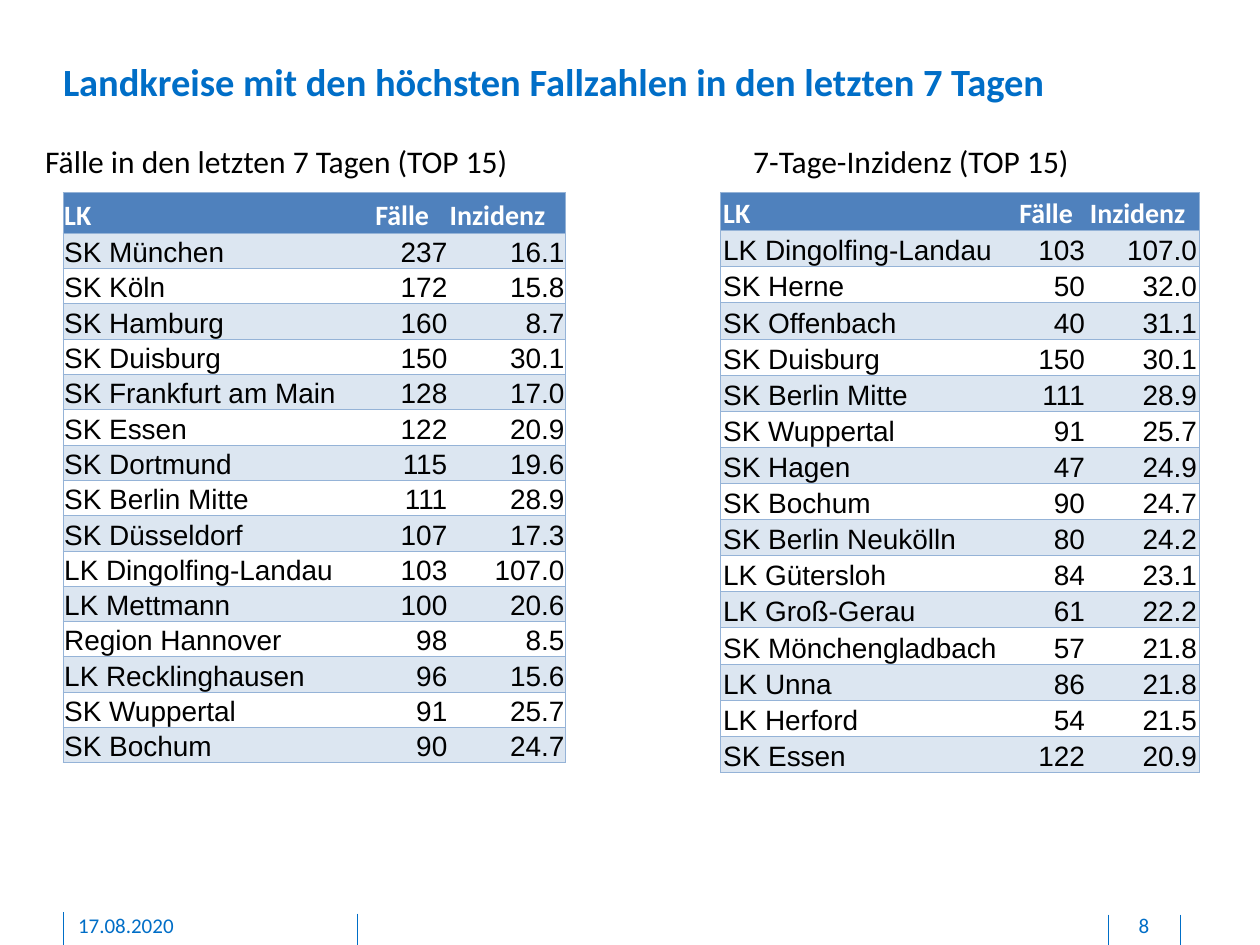
from dataclasses import dataclass

from lxml import etree
from pptx import Presentation
from pptx import util as u
from pptx.dml.color import RGBColor
from pptx.enum import shapes, text
from pptx.oxml.ns import qn


@dataclass(frozen=True)
class Theme:
    blue: str = "006EC7"
    black: str = "000000"
    white: str = "FFFFFF"
    header: str = "4F81BD"
    band: str = "DCE6F1"
    border: str = "95B3D7"
    heading_font: str = "Calibri"
    body_font: str = "Arial"
    title_size: int = 22
    caption_size: int = 18
    table_size: int = 16
    footer_size: int = 12
    line_width: float = 0.5
    plain_table_style: str = "{2D5ABB26-0587-4C30-8999-92F81FD0307C}"


THEME = Theme()
HEADINGS = ("LK", "Fälle", "Inzidenz")

MOST_CASES = [
    ("SK München", "237", "16.1"),
    ("SK Köln", "172", "15.8"),
    ("SK Hamburg", "160", "8.7"),
    ("SK Duisburg", "150", "30.1"),
    ("SK Frankfurt am Main", "128", "17.0"),
    ("SK Essen", "122", "20.9"),
    ("SK Dortmund", "115", "19.6"),
    ("SK Berlin Mitte", "111", "28.9"),
    ("SK Düsseldorf", "107", "17.3"),
    ("LK Dingolfing-Landau", "103", "107.0"),
    ("LK Mettmann", "100", "20.6"),
    ("Region Hannover", "98", "8.5"),
    ("LK Recklinghausen", "96", "15.6"),
    ("SK Wuppertal", "91", "25.7"),
    ("SK Bochum", "90", "24.7"),
]

HIGHEST_INCIDENCE = [
    ("LK Dingolfing-Landau", "103", "107.0"),
    ("SK Herne", "50", "32.0"),
    ("SK Offenbach", "40", "31.1"),
    ("SK Duisburg", "150", "30.1"),
    ("SK Berlin Mitte", "111", "28.9"),
    ("SK Wuppertal", "91", "25.7"),
    ("SK Hagen", "47", "24.9"),
    ("SK Bochum", "90", "24.7"),
    ("SK Berlin Neukölln", "80", "24.2"),
    ("LK Gütersloh", "84", "23.1"),
    ("LK Groß-Gerau", "61", "22.2"),
    ("SK Mönchengladbach", "57", "21.8"),
    ("LK Unna", "86", "21.8"),
    ("LK Herford", "54", "21.5"),
    ("SK Essen", "122", "20.9"),
]


def style_paragraph(para, size, color, font=THEME.heading_font, bold=False,
                    align=text.PP_ALIGN.LEFT):
    para.alignment = align
    para.font.size = u.Pt(size)
    para.font.name = font
    para.font.bold = bold
    para.font.color.rgb = RGBColor.from_string(color)


def add_text(page, box, words, size, color, margins=(0, 0, 0, 0), wrap=True, **style):
    frame = page.shapes.add_textbox(*map(u.Inches, box)).text_frame
    frame.word_wrap = wrap
    (frame.margin_left, frame.margin_top,
     frame.margin_right, frame.margin_bottom) = map(u.Inches, margins)
    para = frame.paragraphs[0]
    para.text = words
    style_paragraph(para, size, color, **style)


def add_title(page, box):
    add_text(page, box, "Landkreise mit den höchsten Fallzahlen in den letzten 7 Tagen",
             THEME.title_size, THEME.blue, bold=True)


def add_caption(page, box, words):
    add_text(page, box, words, THEME.caption_size, THEME.black,
             margins=(0.1, 0.05, 0.1, 0.05), wrap=False)


def add_divider(page, x, top, bottom):
    line = page.shapes.add_connector(shapes.MSO_CONNECTOR.STRAIGHT,
                                     *map(u.Inches, (x, top, x, bottom)))
    line.line.color.rgb = RGBColor.from_string(THEME.blue)
    line.line.width = u.Pt(THEME.line_width)
    etree.SubElement(line._element.spPr, qn("a:effectLst"))


def add_footer(page, box):
    left, top, width, height = box
    for offset, start in ((0, 0), (2.34, 0.01), (8.3, 0.02), (width, 0.02)):
        add_divider(page, left + offset, top + start, top + height)
    margins = (0, 0, 0, 0.05)
    add_text(page, (left + 0.12, top, 2.03, 0.21), "17.08.2020",
             THEME.footer_size, THEME.blue, margins)
    add_text(page, (left + 8.31, top, 0.54, 0.21), "8",
             THEME.footer_size, THEME.blue, margins, align=text.PP_ALIGN.CENTER)


def set_borders(cell, sides):
    properties = cell._tc.get_or_add_tcPr()
    for side in "LRTB":
        border = etree.SubElement(properties, qn(f"a:ln{side}"),
                                  w=str(u.Pt(THEME.line_width)))
        if side in sides:
            fill = etree.SubElement(border, qn("a:solidFill"))
            etree.SubElement(fill, qn("a:srgbClr"), val=THEME.border)
        else:
            etree.SubElement(border, qn("a:noFill"))


def fill_cell(cell, words, row, column, inset):
    cell.margin_left = cell.margin_top = cell.margin_right = u.Inches(inset)
    cell.margin_bottom = 0
    cell.vertical_anchor = text.MSO_ANCHOR.BOTTOM
    set_borders(cell, ("LTB", "TB", "RTB")[column])
    if row % 2 or row == 0:
        cell.fill.solid()
        cell.fill.fore_color.rgb = RGBColor.from_string(THEME.band if row else THEME.header)
    else:
        cell.fill.background()
    para = cell.text_frame.paragraphs[0]
    para.text = words
    if row == 0:
        style_paragraph(para, THEME.table_size, THEME.white, bold=True)
    else:
        align = text.PP_ALIGN.RIGHT if column else text.PP_ALIGN.LEFT
        style_paragraph(para, THEME.table_size, THEME.black, THEME.body_font, align=align)


def add_ranking(page, box, districts, widths, header_height, inset):
    rows = [HEADINGS, *districts]
    table = page.shapes.add_table(len(rows), len(HEADINGS), *map(u.Inches, box)).table
    table._tbl.tblPr.find(qn("a:tableStyleId")).text = THEME.plain_table_style
    table.horz_banding = False
    for column, width in zip(table.columns, widths):
        column.width = u.Inches(width)
    row_height = (box[3] - header_height) / len(districts)
    for index, values in enumerate(rows):
        table.rows[index].height = u.Inches(row_height if index else header_height)
        for column, words in enumerate(values):
            fill_cell(table.cell(index, column), words, index, column, inset)


def main():
    deck = Presentation()
    deck.slide_width, deck.slide_height = u.Inches(10), u.Inches(7.5)
    page = deck.slides.add_slide(deck.slide_layouts[6])
    add_footer(page, (0.5, 7.24, 8.87, 0.26))
    add_title(page, (0.5, 0.46, 8.85, 0.37))
    add_caption(page, (5.88, 1.08, 2.74, 0.4), "7-Tage-Inzidenz (TOP 15)")
    add_caption(page, (0.26, 1.08, 3.92, 0.4), "Fälle in den letzten 7 Tagen (TOP 15)")
    add_ranking(page, (0.5, 1.53, 3.99, 4.53), MOST_CASES, (2.47, 0.59, 0.93), 0.32, 0.01)
    add_ranking(page, (5.72, 1.53, 3.8, 4.53), HIGHEST_INCIDENCE, (2.35, 0.56, 0.89), 0.3, 0.02)
    deck.save("out.pptx")


if __name__ == "__main__":
    main()
